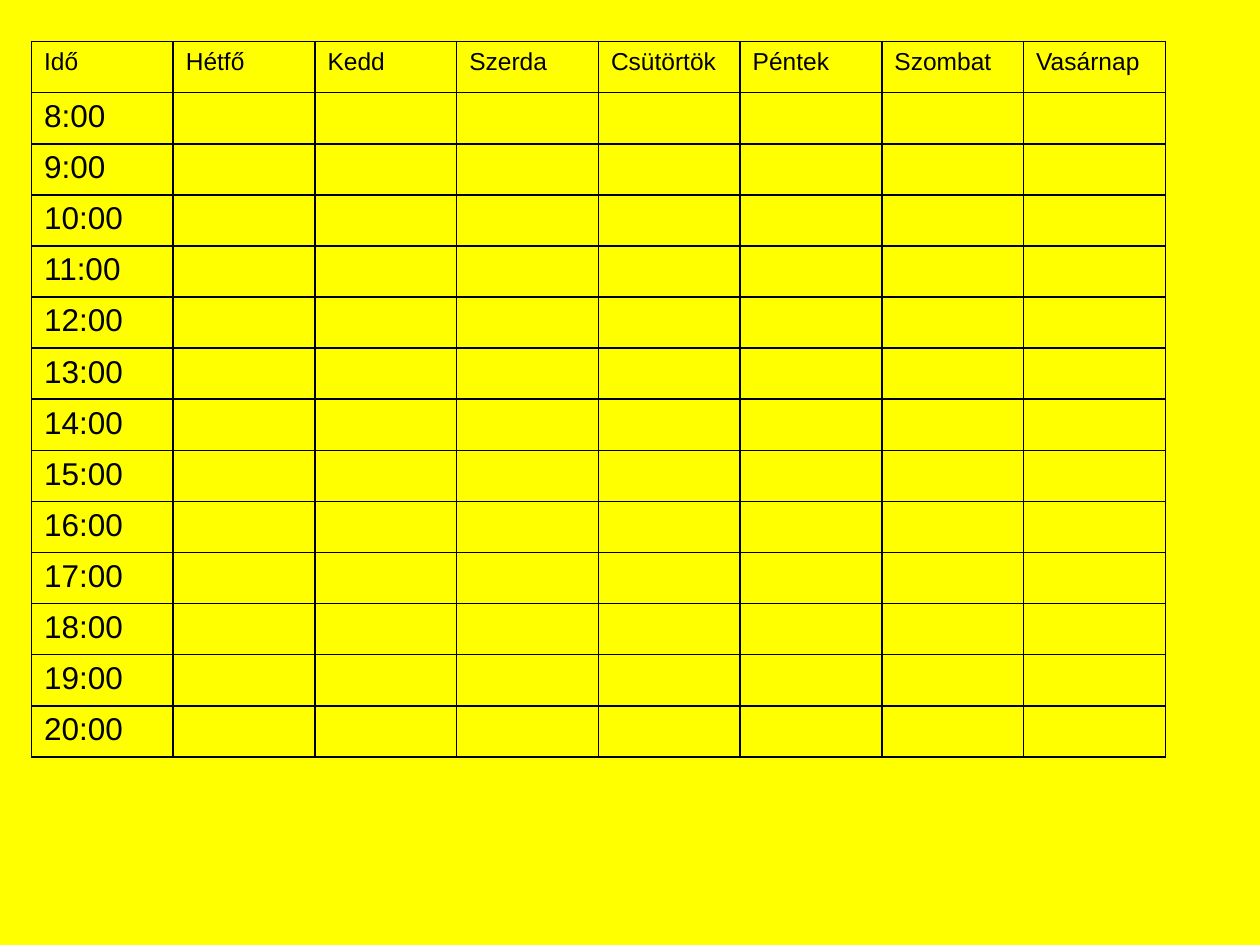
from dataclasses import dataclass

from lxml.etree import SubElement
from pptx import Presentation
from pptx.dml.color import RGBColor
from pptx.oxml.ns import qn
from pptx.slide import Slide
from pptx.table import Table, _Cell
from pptx.util import Inches, Pt

BLACK = "000000"
YELLOW = "FFFF00"
FONT = "Arial"
DAYS = ["Hétfő", "Kedd", "Szerda", "Csütörtök", "Péntek", "Szombat", "Vasárnap"]
HOURS = range(8, 21)


@dataclass
class Label:
    """Text of one timetable cell and where it stands."""

    row: int
    column: int
    text: str
    size: int


def color(value: str) -> RGBColor:
    """Turn a hex string into a colour."""
    return RGBColor.from_string(value)


def style_cell(cell: _Cell) -> None:
    """Clear the fill and draw a thin line on each side."""
    properties = cell._tc.get_or_add_tcPr()
    for side in ("lnL", "lnR", "lnT", "lnB"):
        line = SubElement(properties, qn(f"a:{side}"), w=str(Pt(1)))
        fill = SubElement(line, qn("a:solidFill"))
        SubElement(fill, qn("a:srgbClr"), val=BLACK)
    cell.fill.background()


def write_label(table: Table, label: Label) -> None:
    """Write one label into its cell."""
    para = table.cell(label.row, label.column).text_frame.paragraphs[0]
    span = para.add_run()
    span.text = label.text
    span.font.name = FONT
    span.font.size = Pt(label.size)
    span.font.color.rgb = color(BLACK)


def add_timetable(page: Slide, labels: list[Label]) -> None:
    """Add the weekly grid with equal rows and columns."""
    frame = page.shapes.add_table(
        len(HOURS) + 1, len(DAYS) + 1,
        Inches(0.25), Inches(0.33), Inches(9), Inches(5.68),
    )
    table = frame.table
    table.first_row = False
    table.horz_banding = False
    for cell in table.iter_cells():
        style_cell(cell)
    for label in labels:
        write_label(table, label)


def main() -> None:
    """Build the weekly timetable slide."""
    deck = Presentation()
    deck.slide_width = Inches(10)
    deck.slide_height = Inches(7.5)
    page = deck.slides.add_slide(deck.slide_layouts[6])
    page.background.fill.solid()
    page.background.fill.fore_color.rgb = color(YELLOW)
    header = [Label(0, column, text, 14) for column, text in enumerate(["Idő", *DAYS])]
    times = [Label(row, 0, f"{hour}:00", 18) for row, hour in enumerate(HOURS, 1)]
    add_timetable(page, header + times)
    deck.save("out.pptx")


if __name__ == "__main__":
    main()
